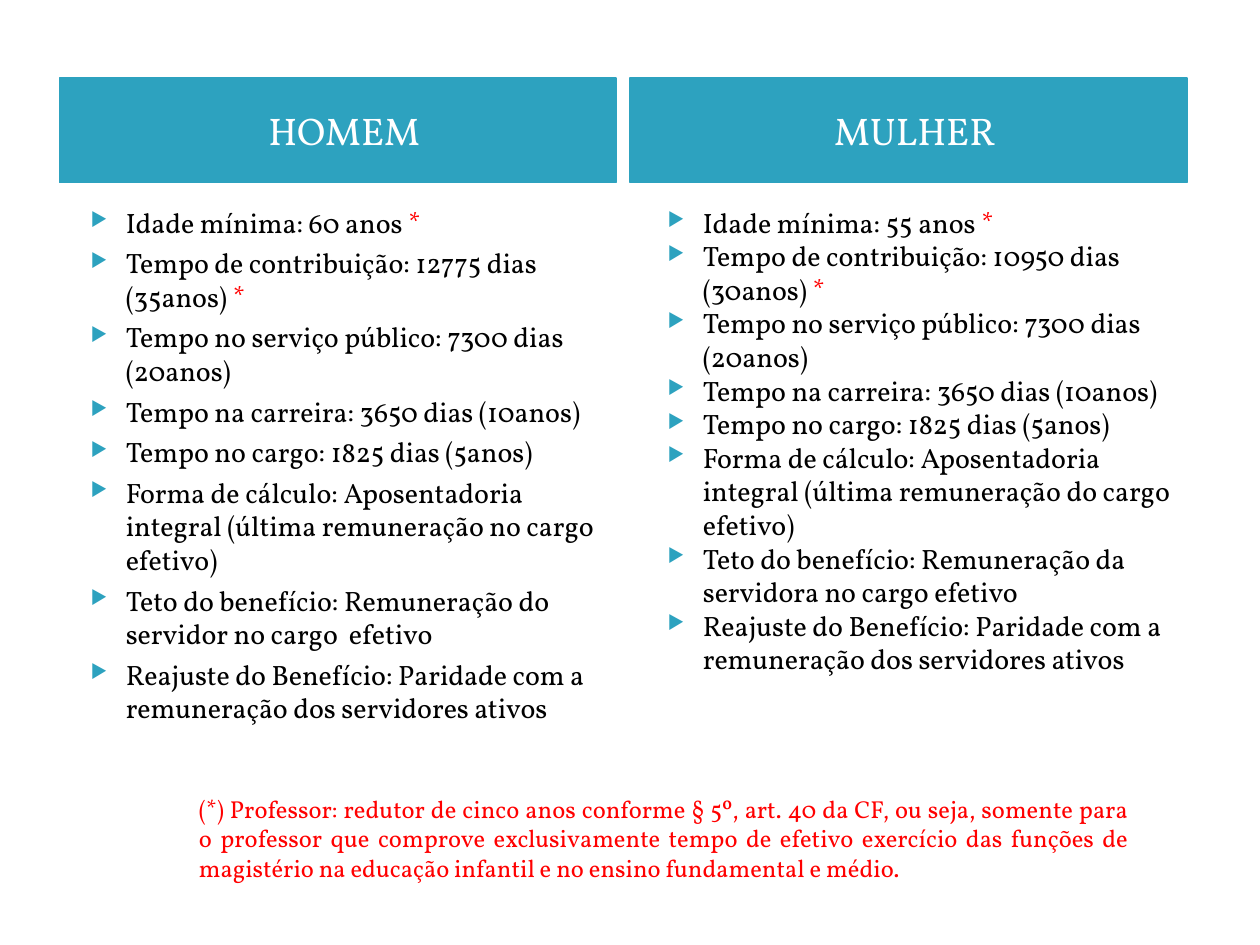
from pptx import Presentation
from pptx.dml.color import RGBColor as Rgb
from pptx.enum.shapes import MSO_SHAPE as Shape
from pptx.enum.text import MSO_ANCHOR as Anchor, PP_ALIGN as Align
from pptx.oxml.ns import qn
from pptx.util import Inches, Pt
from lxml.etree import SubElement as Sub

FONT = "Vollkorn"
TEAL, RED, BLACK, WHITE = "2DA2BF", "FF0000", "000000", "FFFFFF"

MEN = [
    "Idade mínima: 60 anos *",
    "Tempo de contribuição: 12775 dias (35anos) *",
    "Tempo no serviço público: 7300 dias (20anos)",
    "Tempo na carreira: 3650 dias (10anos)",
    "Tempo no cargo: 1825 dias (5anos)",
    "Forma de cálculo: Aposentadoria integral (última remuneração no cargo efetivo)",
    "Teto do benefício: Remuneração do servidor no cargo  efetivo",
    "Reajuste do Benefício: Paridade com a remuneração dos servidores ativos",
]
WOMEN = [
    "Idade mínima: 55 anos *",
    "Tempo de contribuição: 10950 dias (30anos) *",
    *MEN[2:5],
    "Forma de cálculo: Aposentadoria integral (última remuneração do cargo efetivo)",
    "Teto do benefício: Remuneração da servidora no cargo efetivo",
    MEN[7],
]
NOTE = (
    "(*) Professor: redutor de cinco anos conforme § 5º, art. 40 da CF, ou seja, "
    "somente para o professor que comprove exclusivamente tempo de efetivo exercício "
    "das funções de magistério na educação infantil e no ensino fundamental e médio."
)


def paint(target, color):
    if hasattr(target, "solid"):
        target.solid()
        target.fore_color.rgb = Rgb.from_string(color)
    else:
        target.color.rgb = Rgb.from_string(color)


def add_run(para, text, size, color):
    run = para.add_run()
    run.text = text
    run.font.name = FONT
    run.font.size = Pt(size)
    paint(run.font, color)


def add_head(slide, left, text):
    box = slide.shapes.add_shape(
        Shape.RECTANGLE, Inches(left), Inches(0.62), Inches(4.42), Inches(0.83))
    box.shadow.inherit = False
    paint(box.fill, TEAL)
    paint(box.line.fill, TEAL)
    box.line.width = Pt(0.75)
    frame = box.text_frame
    frame.word_wrap = True
    frame.vertical_anchor = Anchor.MIDDLE
    frame.margin_left = Inches(0.2)
    para = frame.paragraphs[0]
    para.alignment = Align.CENTER
    add_run(para, text, 22, WHITE)


def add_text(slide, left, top, width, height):
    box = slide.shapes.add_textbox(
        Inches(left), Inches(top), Inches(width), Inches(height))
    box.text_frame.word_wrap = True
    return box.text_frame


def add_bullet(para):
    props = para._p.get_or_add_pPr()
    props.set("marL", str(Inches(0.4)))
    props.set("indent", str(Inches(-0.28)))
    Sub(Sub(props, qn("a:buClr")), qn("a:srgbClr")).set("val", TEAL)
    Sub(props, qn("a:buSzPct")).set("val", "68000")
    Sub(props, qn("a:buChar")).set("char", "▶")


def add_list(slide, left, height, items, gap):
    frame = add_text(slide, left, 1.58, 4.42, height)
    for i, item in enumerate(items):
        para = frame.add_paragraph() if i else frame.paragraphs[0]
        add_bullet(para)
        para.space_before = Pt(gap if i else 0)
        text, star, _ = item.partition("*")
        add_run(para, text, 16, BLACK)
        if star:
            add_run(para, star, 16, RED)


def add_note(slide, text):
    para = add_text(slide, 1.48, 6.25, 7.58, 0.81).paragraphs[0]
    para.alignment = Align.JUSTIFY
    add_run(para, text, 14, RED)


def main():
    deck = Presentation()
    deck.slide_width, deck.slide_height = Inches(10), Inches(7.5)
    slide = deck.slides.add_slide(deck.slide_layouts[6])
    add_head(slide, 0.47, "HOMEM")
    add_head(slide, 5, "MULHER")
    add_list(slide, 0.5, 4.31, MEN, 4)
    add_list(slide, 5.08, 3.97, WOMEN, 0)
    add_note(slide, NOTE)
    deck.save("out.pptx")


if __name__ == "__main__":
    main()
